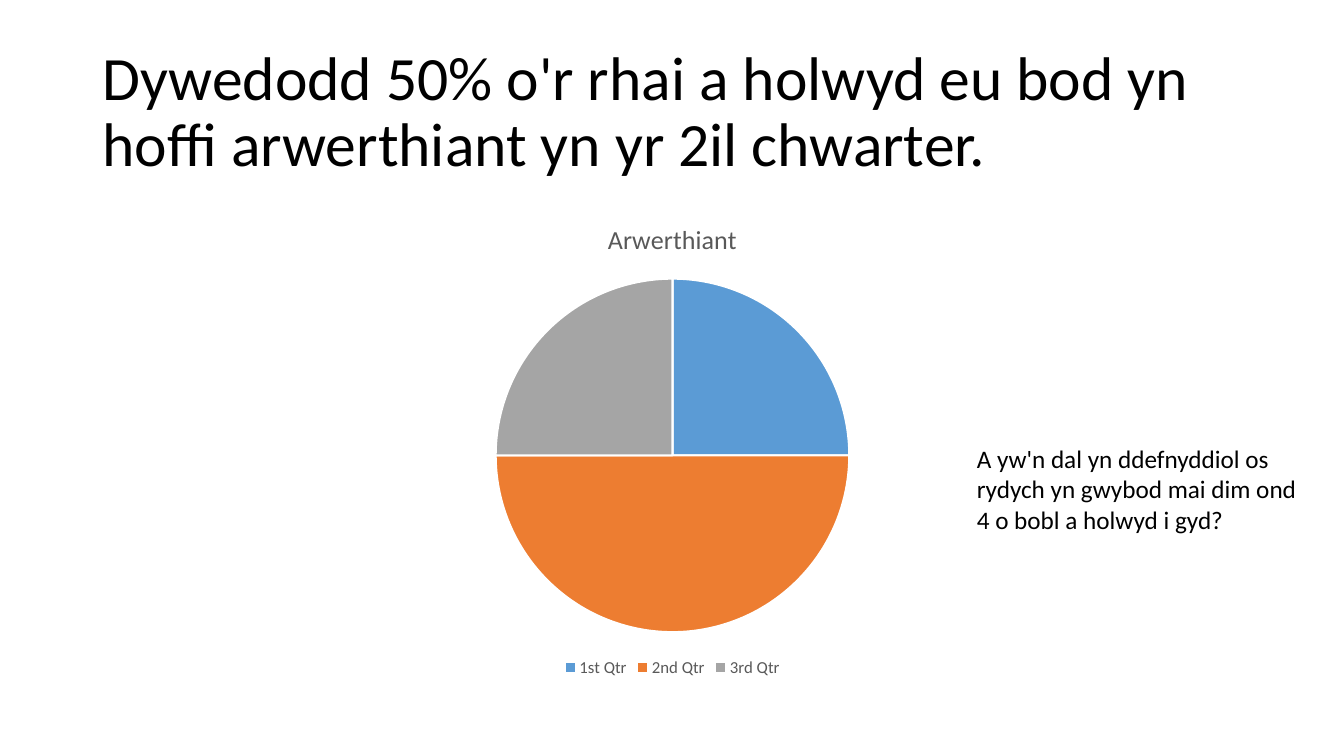
from dataclasses import dataclass

from pptx import Presentation
from pptx import util as u
from pptx.chart.data import CategoryChartData
from pptx.dml.color import RGBColor
from pptx.enum import chart as ch, text as tx

PX = 9144  # EMU per px, 100 px to the inch


@dataclass(frozen=True)
class Theme:
    face: str = "Calibri"
    ink: str = "000000"
    soft: str = "595959"
    edge: str = "FFFFFF"
    slices: tuple = ("5B9BD5", "ED7D31", "A5A5A5")
    head: float = 44
    body: float = 18
    label: float = 18.6
    key: float = 12


def style(font, theme, size, color):
    font.name = theme.face
    font.size = u.Pt(size)
    font.bold = False
    font.color.rgb = RGBColor.from_string(color)


def write(frame, words, theme, size, color, anchor=tx.MSO_ANCHOR.TOP, lead=1.0):
    """Fill a text frame with one wrapped paragraph; lead is line spacing."""
    frame.word_wrap = True
    frame.vertical_anchor = anchor
    para = frame.paragraphs[0]
    para.line_spacing = lead
    run = para.add_run()
    run.text = words
    style(run.font, theme, size, color)


class Deck:
    def __init__(self, theme, wide, high):
        self.theme = theme
        self.show = Presentation()
        self.show.slide_width = wide * PX
        self.show.slide_height = high * PX
        self.slide = self.show.slides.add_slide(self.show.slide_layouts[6])

    def text(self, box, words, size, **form):
        shape = self.slide.shapes.add_textbox(*(n * PX for n in box))
        write(shape.text_frame, words, self.theme, size, self.theme.ink, **form)

    def pie(self, box, title, parts):
        theme = self.theme
        data = CategoryChartData()
        data.categories = list(parts)
        data.add_series("Series 1", list(parts.values()))
        chart = self.slide.shapes.add_chart(
            ch.XL_CHART_TYPE.PIE, *(n * PX for n in box), data).chart
        style(chart.font, theme, theme.key, theme.soft)

        chart.has_title = True
        write_title = chart.chart_title.text_frame
        write_title.text = title
        style(write_title.paragraphs[0].runs[0].font, theme, theme.label, theme.soft)
        chart.chart_title.include_in_layout = False

        chart.has_legend = True
        chart.legend.position = ch.XL_LEGEND_POSITION.BOTTOM
        chart.legend.include_in_layout = False
        style(chart.legend.font, theme, theme.key, theme.soft)

        plot = chart.plots[0]
        plot.vary_by_categories = True
        for i, color in enumerate(theme.slices):
            form = plot.series[0].points[i].format
            form.fill.solid()
            form.fill.fore_color.rgb = RGBColor.from_string(color)
            form.line.color.rgb = RGBColor.from_string(theme.edge)
            form.line.width = u.Pt(1.5)

    def save(self):
        self.show.save("out.pptx")


def main():
    theme = Theme()
    deck = Deck(theme, 1333, 750)
    deck.text((92, 40, 1150, 145),
              "Dywedodd 50% o'r rhai a holwyd eu bod yn hoffi arwerthiant yn yr 2il chwarter.",
              theme.head, anchor=tx.MSO_ANCHOR.MIDDLE, lead=0.9)
    deck.pie((92, 200, 1150, 476), "Arwerthiant",
             {"1st Qtr": 25, "2nd Qtr": 50, "3rd Qtr": 25})
    deck.text((959, 435, 343, 101),
              "A yw'n dal yn ddefnyddiol os rydych yn gwybod mai dim ond 4 o bobl a holwyd i gyd?",
              theme.body)
    deck.save()


if __name__ == "__main__":
    main()
